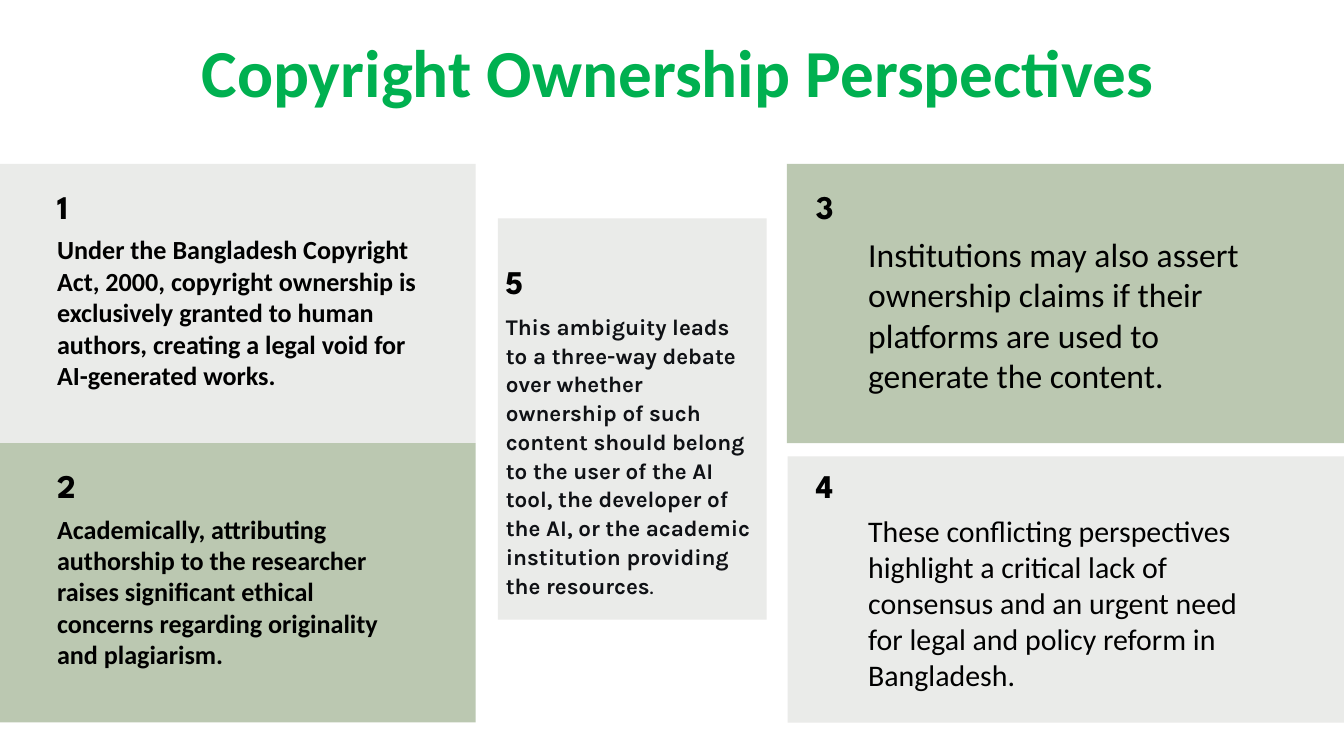
"""Build the slide on copyright ownership perspectives."""
from pptx import Presentation
from pptx.dml.color import RGBColor
from pptx.enum.shapes import MSO_SHAPE
from pptx.enum.text import MSO_ANCHOR, MSO_AUTO_SIZE, PP_ALIGN
from pptx.util import Inches, Pt

GREY, SAGE, BLACK, INK, GREEN = "EAEBE9", "BBC8B1", "000000", "0F1115", "00B050"
TOP_ROW, BOTTOM_ROW = 21.69, 58.62
NUMBER_DROP, BODY_DROP = 2.05, 9.24

presentation = Presentation()
presentation.slide_width = Inches(20)
presentation.slide_height = Inches(11.25)
slide = presentation.slides.add_slide(presentation.slide_layouts[5])


def share(left, top, width, height):
    across, down = presentation.slide_width / 100, presentation.slide_height / 100
    return int(left * across), int(top * down), int(width * across), int(height * down)


def write(shape, text, font, size, color, bold=True, margins=(0, 0)):
    frame = shape.text_frame
    frame.text = text
    frame.word_wrap = True
    frame.auto_size = MSO_AUTO_SIZE.SHAPE_TO_FIT_TEXT
    frame.vertical_anchor = MSO_ANCHOR.TOP
    frame.margin_left = frame.margin_right = Inches(margins[0])
    frame.margin_top = frame.margin_bottom = Inches(margins[1])
    paragraph = frame.paragraphs[0]
    paragraph.alignment = PP_ALIGN.LEFT
    run = paragraph.runs[0]
    run.font.name, run.font.size, run.font.bold = font, Pt(size), bold
    run.font.color.rgb = RGBColor.from_string(color)
    return paragraph


title = slide.shapes.title
title.left, title.top, title.width, title.height = share(15, 4, 73.7, 10.76)
write(title, "Copyright Ownership Perspectives", "Calibri", 72, GREEN)

panels = [
    (-3.75, TOP_ROW, 39.15, 36.93, GREY),
    (-3.75, BOTTOM_ROW, 39.15, 36.93, SAGE),
    (58.55, TOP_ROW, 45.2, 36.93, SAGE),
    (58.6, 60.36, 45.15, 35.24, GREY),
    (37.05, 28.89, 20, 53.07, GREY),
]
for *box, color in panels:
    panel = slide.shapes.add_shape(MSO_SHAPE.RECTANGLE, *share(*box))
    panel.shadow.inherit = False
    panel.fill.solid()
    panel.fill.fore_color.rgb = RGBColor.from_string(color)
    panel.line.fill.background()

numbers = [
    (4.25, TOP_ROW + NUMBER_DROP, 29.15),
    (4.25, BOTTOM_ROW + NUMBER_DROP, 29.15),
    (60.7, TOP_ROW + NUMBER_DROP, 23.2),
    (60.7, BOTTOM_ROW + NUMBER_DROP, 29.15),
    (37.6, 33.69, 23.2),
]
for number, (left, top, width) in enumerate(numbers, start=1):
    shape = slide.shapes.add_textbox(*share(left, top, width, 6.22))
    write(shape, str(number), "League Spartan", 35.4, BLACK).line_spacing = Pt(49.5)

bodies = [
    (4.25, TOP_ROW, 27, 20.98, 28, True,
     "Under the Bangladesh Copyright Act, 2000, copyright ownership is exclusively "
     "granted to human authors, creating a legal void for AI-generated works."),
    (4.25, BOTTOM_ROW, 24.5, 20.98, 28, True,
     "Academically, attributing authorship to the researcher raises significant "
     "ethical concerns regarding originality and plagiarism."),
    (64.6, TOP_ROW, 29.8, 21.51, 36, False,
     "Institutions may also assert ownership claims if their platforms are used to "
     "generate the content."),
    (64.6, BOTTOM_ROW, 29.8, 23.91, 32, False,
     "These conflicting perspectives highlight a critical lack of consensus and an "
     "urgent need for legal and policy reform in Bangladesh."),
]
for left, row, width, height, size, bold, text in bodies:
    shape = slide.shapes.add_textbox(*share(left, row + BODY_DROP, width, height))
    write(shape, text, "Calibri", size, BLACK, bold)

debate = slide.shapes.add_textbox(*share(37.15, 40.71, 19.15, 39.02))
paragraph = write(
    debate,
    "This ambiguity leads to a three-way debate over whether ownership of such content "
    "should belong to the user of the AI tool, the developer of the AI, or the academic "
    "institution providing the resources",
    "Karla", 24, INK, margins=(0.1, 0.05))
paragraph.line_spacing = 1.07
paragraph.space_after = Pt(8)
period = paragraph.add_run()
period.text = "."
period.font.name, period.font.size, period.font.bold = "Karla", Pt(18), True
period.font.color.rgb = RGBColor.from_string(INK)

presentation.save("out.pptx")
